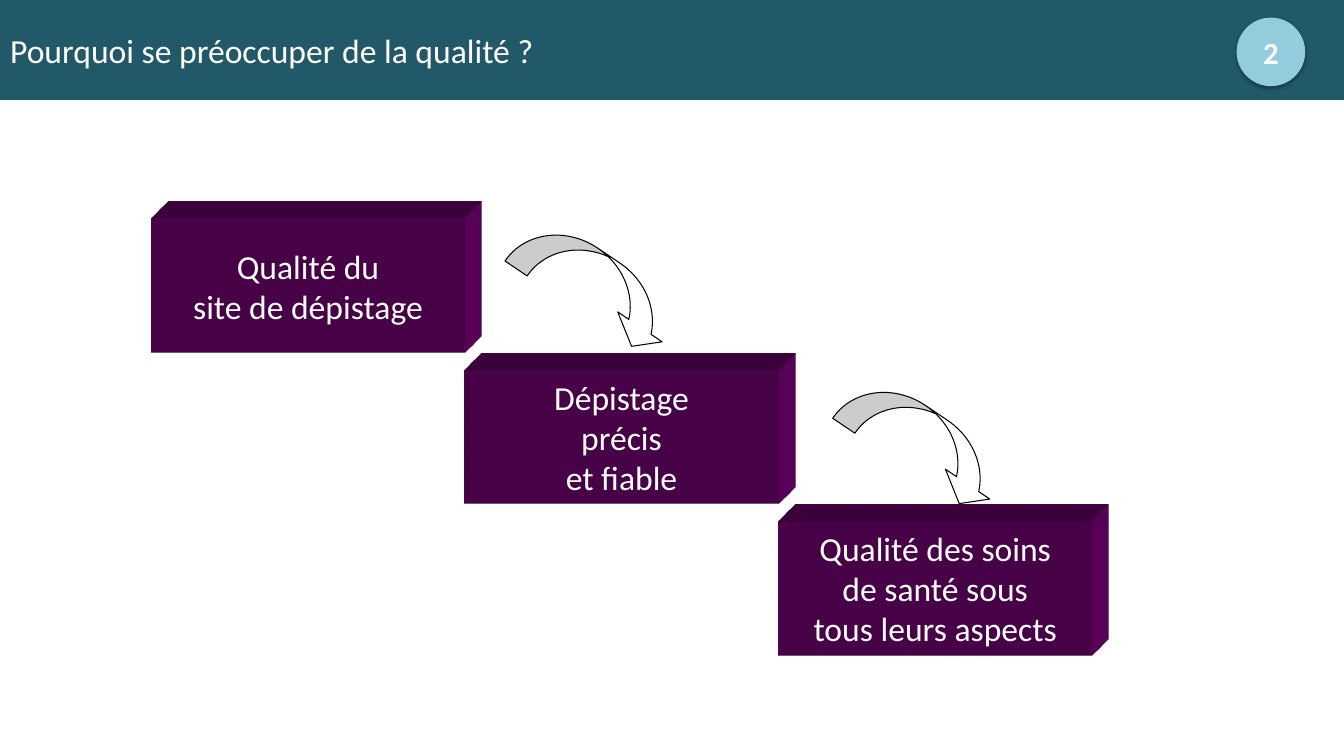
from lxml import etree
from pptx import Presentation
from pptx.dml.color import RGBColor
from pptx.enum import shapes, text
from pptx.util import Inches, Pt

TITLE = "Pourquoi se préoccuper de la qualité ?"
PAGE_NUMBER = "2"
STEPS = [
    "Qualité du\nsite de dépistage",
    "Dépistage\nprécis\net fiable",
    "Qualité des soins\nde santé sous\ntous leurs aspects",
]
ARROW_POSITIONS = [(5.03, 2.52), (8.28, 4.08)]
ARROW_ADJUSTMENTS = [0.428, 0.856, 0.333]

STEP_LEFT, STEP_TOP = 1.5, 2.17
STEP_WIDTH, STEP_HEIGHT, STEP_RISE = 3.11, 1.33, 1.5

FONT = "Calibri"
TEAL = RGBColor(0x21, 0x59, 0x68)
PURPLE = RGBColor(0x66, 0x00, 0x66)
LIGHT_BLUE = RGBColor(0x93, 0xCD, 0xDD)
WHITE = RGBColor(0xFF, 0xFF, 0xFF)
BLACK = RGBColor(0x00, 0x00, 0x00)

NAMESPACE = 'xmlns:a="http://schemas.openxmlformats.org/drawingml/2006/main"'
EXTRUSION = [
    f'<a:scene3d {NAMESPACE}><a:camera prst="legacyObliqueTopRight"/>'
    '<a:lightRig rig="legacyFlat3" dir="b"/></a:scene3d>',
    f'<a:sp3d {NAMESPACE} extrusionH="430200" prstMaterial="legacyMatte">'
    '<a:bevelT w="13500" h="13500" prst="angle"/>'
    '<a:bevelB w="13500" h="13500" prst="angle"/>'
    '<a:extrusionClr><a:srgbClr val="660066"/></a:extrusionClr></a:sp3d>',
]
BADGE_SHADOW = (
    f'<a:outerShdw {NAMESPACE} blurRad="39370" dist="22860" dir="5400000" rotWithShape="0">'
    '<a:srgbClr val="000000"><a:alpha val="35000"/></a:srgbClr></a:outerShdw>'
)


def write(shape, words, size, alignment, bold=False, wrap=True):
    frame = shape.text_frame
    frame.text = words
    frame.word_wrap = wrap
    frame.vertical_anchor = text.MSO_ANCHOR.MIDDLE
    for paragraph in frame.paragraphs:
        paragraph.alignment = alignment
        for run in paragraph.runs:
            run.font.name = FONT
            run.font.size = Pt(size)
            run.font.bold = bold
            run.font.color.rgb = WHITE


def add_shape(slide, kind, left, top, width, height, fill, line=None):
    shape = slide.shapes.add_shape(
        kind, Inches(left), Inches(top), Inches(width), Inches(height))
    shape.fill.solid()
    shape.fill.fore_color.rgb = fill
    if line is None:
        shape.line.fill.background()
    else:
        shape.line.color.rgb = line
        shape.line.width = Pt(0.75)
    shape.shadow.inherit = False
    return shape


def add_title(slide):
    title = slide.shapes.title
    title.left, title.top = Inches(0), Inches(0)
    title.width, title.height = Inches(13.33), Inches(0.99)
    title.fill.solid()
    title.fill.fore_color.rgb = TEAL
    write(title, TITLE, 24, text.PP_ALIGN.LEFT)


def add_steps(slide):
    for index, words in enumerate(STEPS):
        step = add_shape(
            slide, shapes.MSO_SHAPE.RECTANGLE, STEP_LEFT + index * STEP_WIDTH,
            STEP_TOP + index * STEP_RISE, STEP_WIDTH, STEP_HEIGHT, PURPLE)
        for part in EXTRUSION:
            step.element.spPr.append(etree.fromstring(part))
        write(step, words, 24, text.PP_ALIGN.CENTER, wrap=False)


def add_arrows(slide):
    for left, top in ARROW_POSITIONS:
        arrow = add_shape(slide, shapes.MSO_SHAPE.CURVED_DOWN_ARROW,
                          left, top, 1.78, 0.62, WHITE, BLACK)
        arrow.rotation = 34
        for index, value in enumerate(ARROW_ADJUSTMENTS):
            arrow.adjustments[index] = value


def add_badge(slide):
    badge = add_shape(slide, shapes.MSO_SHAPE.OVAL,
                      12.27, 0.18, 0.67, 0.67, LIGHT_BLUE, LIGHT_BLUE)
    effects = badge.element.spPr.find("{*}effectLst")
    effects.append(etree.fromstring(BADGE_SHADOW))
    write(badge, PAGE_NUMBER, 22, text.PP_ALIGN.CENTER, bold=True)


def main():
    """Build the slide on why quality matters and save it."""
    presentation = Presentation()
    presentation.slide_width = Inches(13.33)
    presentation.slide_height = Inches(7.5)
    slide = presentation.slides.add_slide(presentation.slide_layouts[5])
    add_title(slide)
    add_steps(slide)
    add_arrows(slide)
    add_badge(slide)
    presentation.save("out.pptx")


if __name__ == "__main__":
    main()
